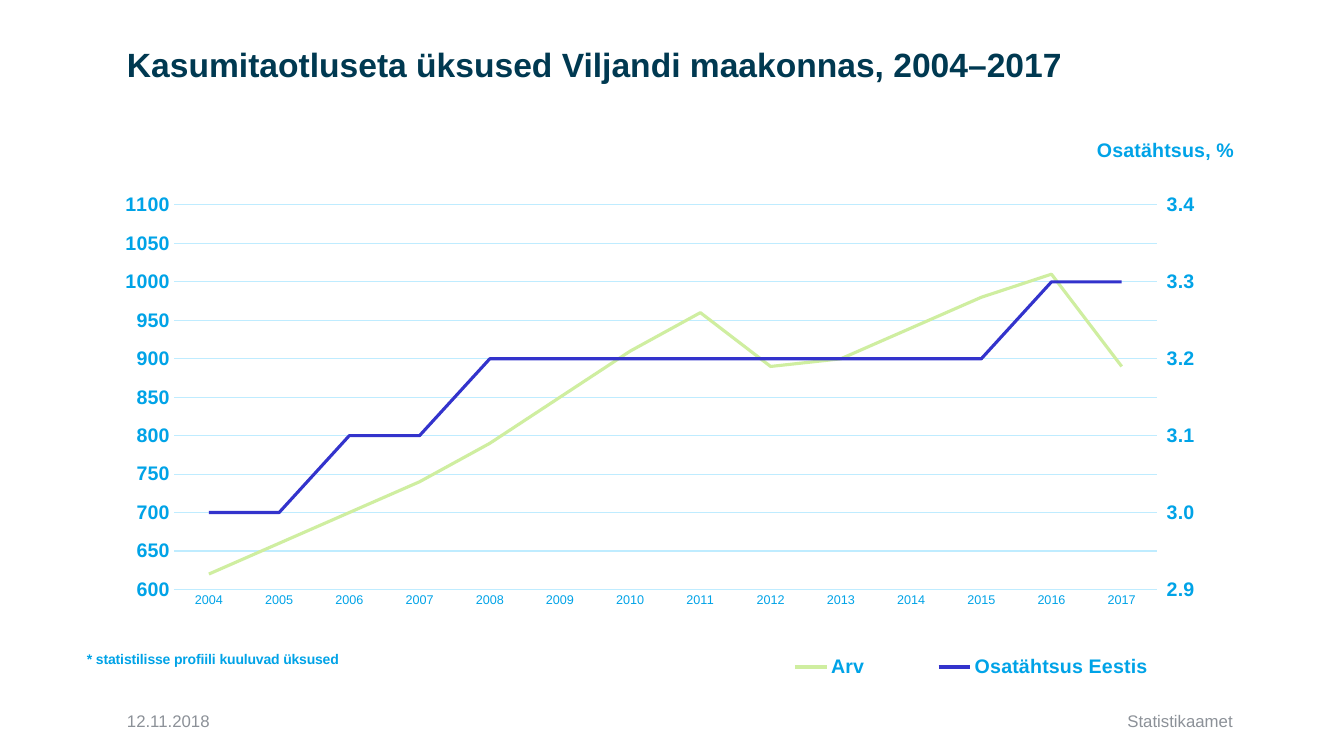
"""Build a slide with a two-axis line chart of non-profit units in Viljandi county."""
from copy import deepcopy
from dataclasses import dataclass

from lxml import etree
from pptx import Presentation
from pptx.chart.axis import CategoryAxis, ValueAxis
from pptx.chart.data import CategoryChartData
from pptx.dml.color import RGBColor
from pptx.enum.chart import XL_CHART_TYPE, XL_LEGEND_POSITION, XL_TICK_MARK
from pptx.enum.text import MSO_ANCHOR, PP_ALIGN
from pptx.oxml.ns import qn
from pptx.util import Cm, Pt

LEFT, RIGHT = PP_ALIGN.LEFT, PP_ALIGN.RIGHT
MIDDLE = MSO_ANCHOR.MIDDLE
LINE = XL_CHART_TYPE.LINE
BOTTOM = XL_LEGEND_POSITION.BOTTOM
NO_TICK, OUTSIDE = XL_TICK_MARK.NONE, XL_TICK_MARK.OUTSIDE


@dataclass(frozen=True)
class Theme:
    font: str = "Arial"
    navy: RGBColor = RGBColor(0x00, 0x39, 0x51)
    grey: RGBColor = RGBColor(0x8C, 0x91, 0x98)
    sky: RGBColor = RGBColor(0x00, 0xA3, 0xE7)
    grid: RGBColor = RGBColor(0xBF, 0xEC, 0xFF)
    green: RGBColor = RGBColor(0xCF, 0xEE, 0xA0)
    blue: RGBColor = RGBColor(0x33, 0x33, 0xCC)
    title: Pt = Pt(24)
    label: Pt = Pt(14)
    footer: Pt = Pt(12)
    note: Pt = Pt(10)
    tick: Pt = Pt(9)
    series_line: Pt = Pt(2.25)
    thin_line: Pt = Pt(0.75)


theme = Theme()


def style(font, size, color, bold=False):
    font.name, font.size, font.bold = theme.font, size, bold
    font.color.rgb = color


def place(parent, index, **layout):
    for old in parent.findall(qn("c:layout")):
        parent.remove(old)
    outer = etree.Element(qn("c:layout"))
    manual = etree.SubElement(outer, qn("c:manualLayout"))
    for key, value in layout.items():
        etree.SubElement(manual, qn(f"c:{key}")).set("val", str(value))
    parent.insert(index, outer)


prs = Presentation()
prs.slide_width, prs.slide_height = Cm(33.87), Cm(19.05)
s = prs.slides.add_slide(prs.slide_layouts[6])

texts = [
    ("Kasumitaotluseta üksused Viljandi maakonnas, 2004–2017",
     (2.95, 0.63, 28.37, 2.11), theme.title, theme.navy, True, LEFT, 0.9),
    ("12.11.2018", (2.95, 17.65, 7.01, 1.02), theme.footer, theme.grey, False, LEFT, 1.0),
    ("Statistikaamet", (11.23, 17.65, 20.09, 1.02), theme.footer, theme.grey, False, RIGHT, 1.0),
]
for text, box, size, color, bold, align, spacing in texts:
    tf = s.shapes.add_textbox(*map(Cm, box)).text_frame
    tf.word_wrap = True
    tf.vertical_anchor = MIDDLE
    p = tf.paragraphs[0]
    p.alignment, p.line_spacing = align, spacing
    r = p.add_run()
    r.text = text
    style(r.font, size, color, bold)

data = CategoryChartData()
data.categories = [str(year) for year in range(2004, 2018)]
data.add_series("Arv", [620, 660, 700, 740, 790, 850, 910, 960, 890, 900, 940, 980, 1010, 890])
data.add_series("Osatähtsus Eestis", [3.0, 3.0, 3.1, 3.1, 3.2, 3.2, 3.2,
                                      3.2, 3.2, 3.2, 3.2, 3.2, 3.3, 3.3])
chart = s.shapes.add_chart(LINE, Cm(1.65), Cm(2.98), Cm(29.67), Cm(14.68), data).chart
style(chart.font, theme.note, theme.navy)

plot = chart.plots[0]
plot.vary_by_categories = False
for series, color in zip(plot.series, (theme.green, theme.blue)):
    series.smooth = False
    series.format.line.color.rgb = color
    series.format.line.width = theme.series_line

years, count = chart.category_axis, chart.value_axis
years.major_tick_mark = count.major_tick_mark = NO_TICK
style(years.tick_labels.font, theme.tick, theme.sky)
style(count.tick_labels.font, theme.label, theme.sky, True)
count.minimum_scale, count.maximum_scale, count.major_unit = 600, 1100, 50
count.tick_labels.number_format = "0"
count.tick_labels.number_format_is_linked = False
count.format.line.fill.background()
for line in (years.format.line, count.major_gridlines.format.line):
    line.color.rgb = theme.grid
    line.width = theme.thin_line

plot_area = chart.element.find(f".//{qn('c:plotArea')}")
count_lines = plot_area.find(qn("c:lineChart"))
share_lines = deepcopy(count_lines)
count_lines.remove(count_lines.findall(qn("c:ser"))[1])
share_lines.remove(share_lines.findall(qn("c:ser"))[0])
count_lines.addnext(share_lines)

right_ids = {ax.find(qn("c:axId")).get("val"): str(number) for ax, number in
             ((plot_area.find(qn("c:catAx")), 5001), (plot_area.find(qn("c:valAx")), 5002))}
right_years = deepcopy(plot_area.find(qn("c:catAx")))
right_share = deepcopy(plot_area.find(qn("c:valAx")))
plot_area.find(qn("c:valAx")).addnext(right_share)
right_share.addnext(right_years)
for part in (share_lines, right_years, right_share):
    for tag in ("c:axId", "c:crossAx"):
        for ref in part.findall(qn(tag)):
            ref.set("val", right_ids[ref.get("val")])
right_share.find(qn("c:axPos")).set("val", "r")
right_share.find(qn("c:crosses")).set("val", "max")

CategoryAxis(right_years).visible = False
share = ValueAxis(right_share)
share.has_major_gridlines = False
share.major_tick_mark = OUTSIDE
share.minimum_scale, share.maximum_scale, share.major_unit = 2.9, 3.4, 0.1
share.tick_labels.number_format = "0.0"

chart.has_title = True
years.has_title = True
titles = [
    (chart.chart_title, "Osatähtsus, %", theme.label, 0.873, 0.026),
    (years.axis_title, "* statistilisse profiili kuuluvad üksused", theme.note, 0.016, 0.908),
]
for title, text, size, x, y in titles:
    r = title.text_frame.paragraphs[0].add_run()
    r.text = text
    style(r.font, size, theme.sky, True)
    place(title._element, 1, xMode="edge", yMode="edge", x=x, y=y)

chart.has_legend = True
legend = chart.legend
legend.position = BOTTOM
legend.include_in_layout = False
style(legend.font, theme.label, theme.sky, True)
place(legend._element, 1, xMode="edge", yMode="edge", x=0.562, y=0.912, w=0.415, h=0.06)
place(plot_area, 0, layoutTarget="inner", xMode="edge", yMode="edge",
      x=0.092, y=0.149, w=0.835, h=0.66)

prs.save("out.pptx")
